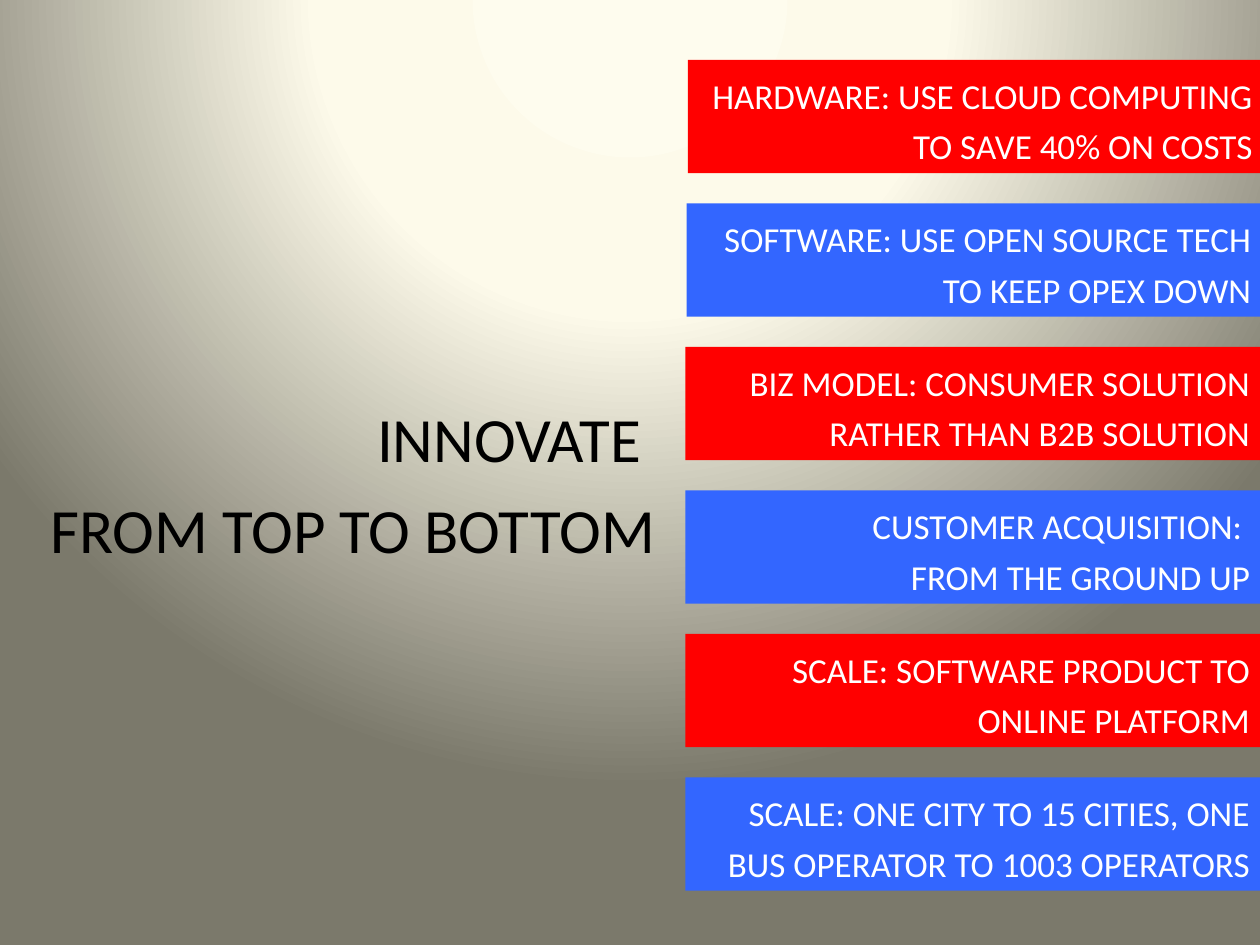
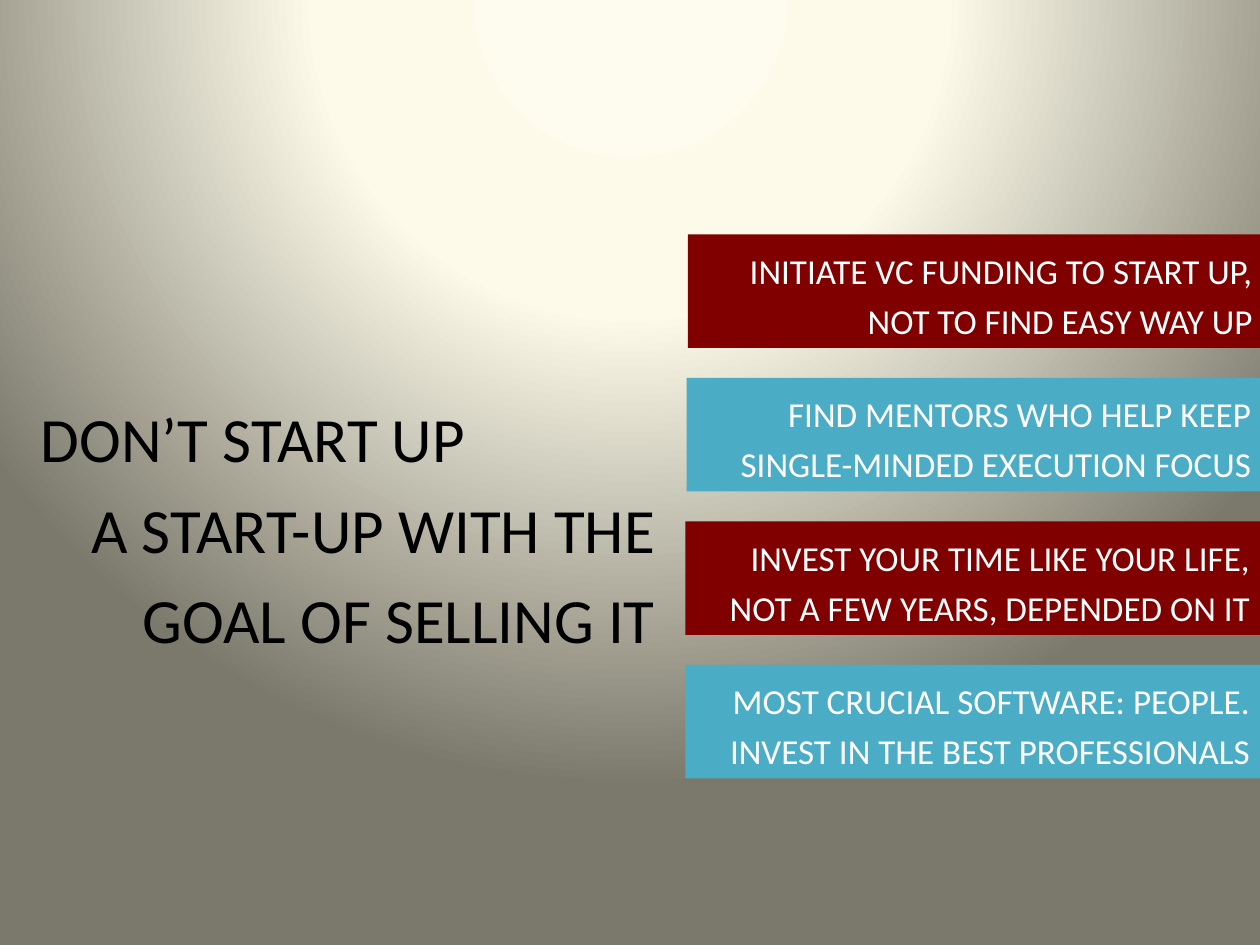
import pptx
import pptx.util
import pptx.dml.color
import pptx.enum.shapes
import pptx.enum.text
import pptx.oxml
import pptx.oxml.ns
from pptx.util import Pt

FONT = "Calibri"
BLACK, WHITE = "000000", "FFFFFF"
RIGHT = pptx.enum.text.PP_ALIGN.RIGHT
LEFT = pptx.enum.text.PP_ALIGN.LEFT

BAR_LEFT, BAR_WIDTH, BAR_HEIGHT = 391.7, 329.8, 64.8
BAR_PITCH = 82
BAR_STEP = 0.7  # the first bars sit slightly further right

SLIDES = [
    {
        "title": "INNOVATE \nFROM TOP TO BOTTOM",
        "title_height": 110,
        "first_bar_top": 34.2,
        "bar_colors": ["FF0000", "3366FF"],
        "bars": [
            "HARDWARE: USE CLOUD COMPUTING TO SAVE 40% ON COSTS",
            "SOFTWARE: USE OPEN SOURCE TECH TO KEEP OPEX DOWN",
            "BIZ MODEL: CONSUMER SOLUTION RATHER THAN B2B SOLUTION",
            "CUSTOMER ACQUISITION: \nFROM THE GROUND UP",
            "SCALE: SOFTWARE PRODUCT TO ONLINE PLATFORM",
            "SCALE: ONE CITY TO 15 CITIES, ONE BUS OPERATOR TO 1003 OPERATORS",
        ],
    },
    {
        "title": "DON’T START UP\nA START-UP WITH THE GOAL OF SELLING IT",
        "title_height": 163,
        "first_bar_top": 134,
        "bar_colors": ["800000", "4BACC6"],
        "bars": [
            "INITIATE VC FUNDING TO START UP, NOT TO FIND EASY WAY UP",
            "FIND MENTORS WHO HELP KEEP SINGLE-MINDED EXECUTION FOCUS",
            "INVEST YOUR TIME LIKE YOUR LIFE, NOT A FEW YEARS, DEPENDED ON IT",
            "MOST CRUCIAL SOFTWARE: PEOPLE. INVEST IN THE BEST PROFESSIONALS",
        ],
    },
]


def rgb(color):
    return pptx.dml.color.RGBColor.from_string(color)


def write_text(shape, text, size, color):
    """Right-aligned text with wide line spacing, starting at the top."""
    frame = shape.text_frame
    frame.text = text
    frame.word_wrap = True
    frame.auto_size = pptx.enum.text.MSO_AUTO_SIZE.NONE
    frame.vertical_anchor = pptx.enum.text.MSO_ANCHOR.TOP
    for paragraph in frame.paragraphs:
        paragraph.alignment = RIGHT
        paragraph.line_spacing = 1.2
        for run in paragraph.runs:
            run.font.name = FONT
            run.font.size = Pt(size)
            run.font.color.rgb = rgb(color)


presentation = pptx.Presentation()
presentation.slide_width = Pt(720)
presentation.slide_height = Pt(540)

# Shared background: a circular glow on the master
master = presentation.slide_master
master.background.fill.gradient()
gradient = master.element.find(".//" + pptx.oxml.ns.qn("a:gradFill"))
glow = pptx.oxml.parse_xml(
    f'<a:gradFill {pptx.oxml.ns.nsdecls("a")} rotWithShape="1"><a:gsLst>'
    '<a:gs pos="0"><a:srgbClr val="FEFCEE"/></a:gs>'
    '<a:gs pos="40000"><a:srgbClr val="FDFAEA"/></a:gs>'
    '<a:gs pos="100000"><a:srgbClr val="7B796B"/></a:gs></a:gsLst>'
    '<a:path path="circle">'
    '<a:fillToRect l="50000" t="-80000" r="50000" b="180000"/>'
    '</a:path></a:gradFill>')
gradient.getparent().replace(gradient, glow)

title_only = presentation.slide_layouts.get_by_name("Title Only")
for content in SLIDES:
    slide = presentation.slides.add_slide(title_only)

    # Title on the left
    title = slide.shapes.title
    title.left, title.top = Pt(0), Pt(216)
    title.width, title.height = Pt(381.6), Pt(content["title_height"])
    write_text(title, content["title"], 36, BLACK)

    # Bars on the right, in alternating colours
    for index, text in enumerate(content["bars"]):
        bar = slide.shapes.add_shape(
            pptx.enum.shapes.MSO_SHAPE.RECTANGLE,
            Pt(BAR_LEFT + BAR_STEP * max(2 - index, 0)),
            Pt(content["first_bar_top"] + BAR_PITCH * index),
            Pt(BAR_WIDTH), Pt(BAR_HEIGHT))
        bar.shadow.inherit = False
        bar.fill.solid()
        bar.fill.fore_color.rgb = rgb(content["bar_colors"][index % 2])
        bar.line.fill.background()
        write_text(bar, text, 20, WHITE)

# The last title opens at the left, slightly indented
opening = presentation.slides[1].shapes.title.text_frame.paragraphs[0]
opening.alignment = LEFT
opening_properties = opening._p.get_or_add_pPr()
opening_properties.set("marL", str(Pt(16)))
opening_properties.set("indent", "0")

presentation.save("out.pptx")
